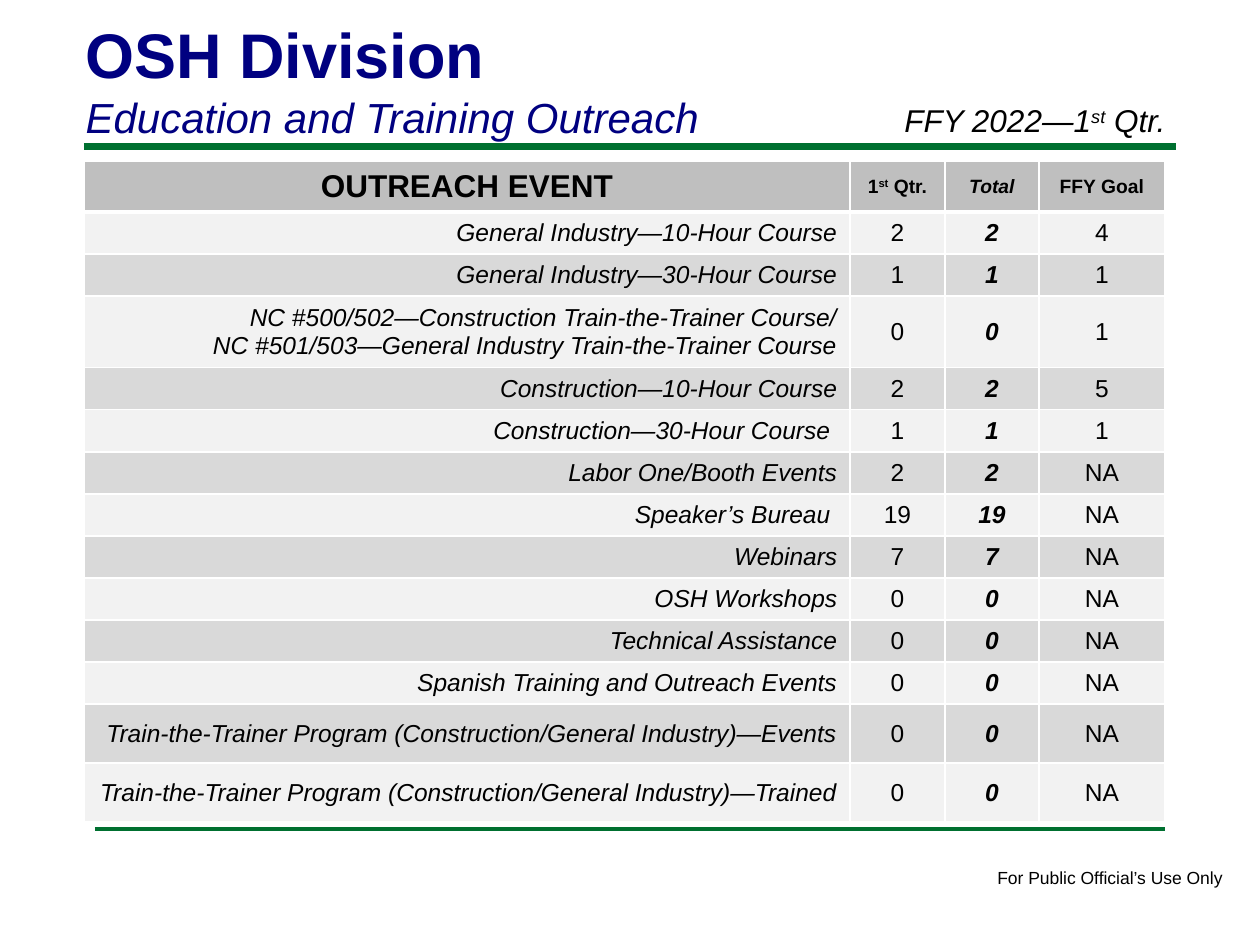
from lxml import etree
from pptx import Presentation
from pptx.dml.color import RGBColor
from pptx.enum.shapes import MSO_CONNECTOR
from pptx.enum.text import MSO_ANCHOR, PP_ALIGN
from pptx.oxml.ns import qn
from pptx.util import Emu, Pt

LEFT, CENTER, RIGHT = PP_ALIGN.LEFT, PP_ALIGN.CENTER, PP_ALIGN.RIGHT
MIDDLE, BOTTOM = MSO_ANCHOR.MIDDLE, MSO_ANCHOR.BOTTOM
STRAIGHT = MSO_CONNECTOR.STRAIGHT
PX = 914400 / 126
rgb = RGBColor.from_string


def px(*values):
    return [Emu(round(v * PX)) for v in values]


def write(p, text, size=14, bold=False, italic=False, color="000000", align=LEFT):
    p.alignment = align
    for i, part in enumerate(text.split("^")):
        r = p.add_run()
        r.text = part
        r.font.name = "Arial"
        r.font.size = Pt(size)
        r.font.bold = bold
        r.font.italic = italic
        r.font.color.rgb = rgb(color)
        if i % 2:
            r._r.get_or_add_rPr().set("baseline", "30000")


prs = Presentation()
prs.slide_width, prs.slide_height = px(1260, 945)
s = prs.slides.add_slide(prs.slide_layouts[5])

for x1, x2, y, width in [(84, 1176, 147, 4), (95, 1165, 829, 2)]:
    line = s.shapes.add_connector(STRAIGHT, *px(x1, y, x2, y))
    line.line.color.rgb = rgb("007030")
    line.line.width = Pt(width)
    etree.SubElement(line._element.spPr, qn("a:effectLst"))

title = s.shapes.title
title.left, title.top, title.width, title.height = px(73, 8, 1040, 140)
tf = title.text_frame
tf.vertical_anchor = BOTTOM
write(tf.paragraphs[0], "OSH Division", size=36, bold=True, color="000080")
write(tf.add_paragraph(), "Education and Training Outreach", size=24, italic=True, color="000080")

labels = [
    ("FFY 2022—1^st^ Qtr.", (892, 95, 315, 51), 18, True, True),
    ("For Public Official’s Use Only", (985, 861, 253, 34), 10, False, False),
]
for text, box, size, italic, wrap in labels:
    tf = s.shapes.add_textbox(*px(*box)).text_frame
    tf.word_wrap = wrap
    write(tf.paragraphs[0], text, size=size, italic=italic)

rows = [
    ("OUTREACH EVENT", "1^st^ Qtr.", "Total", "FFY Goal"),
    ("General Industry—10-Hour Course", "2", "2", "4"),
    ("General Industry—30-Hour Course", "1", "1", "1"),
    ("NC #500/502—Construction Train-the-Trainer Course/\n"
     "NC #501/503—General Industry Train-the-Trainer Course", "0", "0", "1"),
    ("Construction—10-Hour Course", "2", "2", "5"),
    ("Construction—30-Hour Course ", "1", "1", "1"),
    ("Labor One/Booth Events", "2", "2", "NA"),
    ("Speaker’s Bureau ", "19", "19", "NA"),
    ("Webinars", "7", "7", "NA"),
    ("OSH Workshops", "0", "0", "NA"),
    ("Technical Assistance", "0", "0", "NA"),
    ("Spanish Training and Outreach Events", "0", "0", "NA"),
    ("Train-the-Trainer Program (Construction/General Industry)—Events", "0", "0", "NA"),
    ("Train-the-Trainer Program (Construction/General Industry)—Trained ", "0", "0", "NA"),
]
widths = px(766, 95, 94, 126)
heights = px(51, 42, 42, 71, *[42] * 8, 59, 59)
left, top = px(84, 161)
table = s.shapes.add_table(len(rows), len(widths), left, top, sum(widths), sum(heights)).table
table.first_row = table.horz_banding = False
for column, width in zip(table.columns, widths):
    column.width = width
for row, height in zip(table.rows, heights):
    row.height = height

for i, row in enumerate(rows):
    header = i == 0
    fill = "BFBFBF" if header else "F2F2F2" if i % 2 else "D9D9D9"
    for j, text in enumerate(row):
        cell = table.cell(i, j)
        tcPr = cell._tc.get_or_add_tcPr()
        for side in "LRTB":
            thick = (header and side == "B") or (i == 1 and side == "T")
            ln = etree.SubElement(tcPr, qn("a:ln" + side), w=str(Pt(3 if thick else 1)))
            etree.SubElement(etree.SubElement(ln, qn("a:solidFill")), qn("a:srgbClr"), val="FFFFFF")
        cell.fill.solid()
        cell.fill.fore_color.rgb = rgb(fill)
        cell.vertical_anchor = MIDDLE
        size = (18 if j == 0 else 11) if header else 14
        italic = j == 2 or (j == 0 and not header)
        align = RIGHT if j == 0 and not header else CENTER
        tf = cell.text_frame
        for k, part in enumerate(text.split("\n")):
            p = tf.add_paragraph() if k else tf.paragraphs[0]
            write(p, part, size=size, bold=header or j == 2, italic=italic, align=align)

prs.save("out.pptx")
